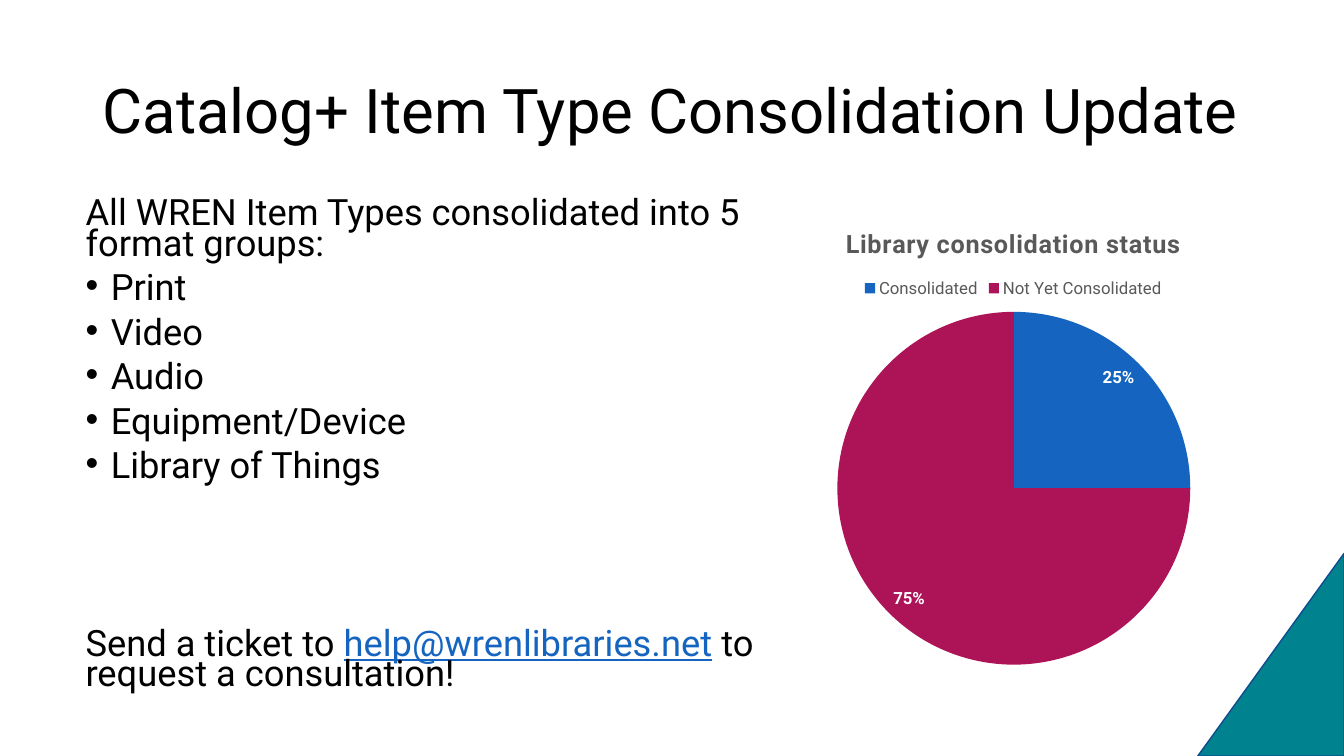
from lxml import etree
from pptx import Presentation
from pptx.chart.data import CategoryChartData
from pptx.dml.color import RGBColor
from pptx.enum.chart import XL_CHART_TYPE, XL_LABEL_POSITION, XL_LEGEND_POSITION
from pptx.enum.shapes import MSO_SHAPE
from pptx.enum.text import MSO_ANCHOR
from pptx.oxml import parse_xml
from pptx.oxml.ns import nsdecls, qn
from pptx.util import Inches, Pt

PIE = XL_CHART_TYPE.PIE
INSIDE_END = XL_LABEL_POSITION.INSIDE_END
LEGEND_TOP = XL_LEGEND_POSITION.TOP
RIGHT_TRIANGLE = MSO_SHAPE.RIGHT_TRIANGLE
MIDDLE, TOP = MSO_ANCHOR.MIDDLE, MSO_ANCHOR.TOP

WIDTH, HEIGHT = 13.33, 7.5
FONT = "Roboto"
COLORS = {
    "text": "000000", "muted": "595959", "white": "FFFFFF", "blue": "1565C0",
    "magenta": "AD1457", "teal": "00838E", "outline": "104B8E",
}
TITLE_BOX = (0.92, 0.4, 11.5, 1.45)
BODY_BOX = (0.75, 1.95, 7.22, 5.15)
CHART_BOX = (7.34, 2.06, 5.42, 4.68)
CORNER_BOX = (11.88, 5.49, 1.45, 2.01)
TITLE = "Catalog+ Item Type Consolidation Update"
INTRO = "All WREN Item Types consolidated into 5 format groups:"
FORMATS = ["Print", "Video", "Audio", "Equipment/Device", "Library of Things"]
CONTACT = [
    ("Send a ticket to ", {}),
    ("help@wrenlibraries.net", {"color": "blue", "underline": True}),
    (" to request a consultation!", {}),
]
STATUS = {"Consolidated": (25, "blue"), "Not Yet Consolidated": (75, "magenta")}
PLOT_SHARES = {"x": 0.178, "y": 0.221, "w": 0.646, "h": 0.748}


def rgb(name):
    """Return the named colour."""
    return RGBColor.from_string(COLORS[name])


def format_font(font, size, color="text", **values):
    """Set the typeface, size, colour and further font values."""
    font.color.rgb = rgb(color)
    for name, value in {"name": FONT, "size": Pt(size), **values}.items():
        setattr(font, name, value)


def add_text_frame(slide, box, anchor):
    """Add a wrapping text box and return its frame."""
    frame = slide.shapes.add_textbox(*map(Inches, box)).text_frame
    frame.word_wrap = True
    frame.vertical_anchor = anchor
    return frame


def add_runs(paragraph, runs, size, spacing):
    """Fill a paragraph with formatted runs."""
    paragraph.line_spacing = spacing
    for text, values in runs:
        run = paragraph.add_run()
        run.text = text
        format_font(run.font, size, **values)


def add_bullet(paragraph):
    """Give a paragraph a round bullet with a hanging indent."""
    properties = paragraph._p.get_or_add_pPr()
    properties.set("marL", str(Inches(0.25)))
    properties.set("indent", str(-Inches(0.25)))
    etree.SubElement(properties, qn("a:buFont")).set("typeface", "Arial")
    etree.SubElement(properties, qn("a:buChar")).set("char", "•")


def add_corner(slide, box):
    """Draw the triangle that fills the lower right corner."""
    left, top, width, height = box
    shift = (height - width) / 2
    triangle = slide.shapes.add_shape(
        RIGHT_TRIANGLE, *map(Inches, (left - shift, top + shift, height, width)))
    triangle.rotation = 270
    triangle.shadow.inherit = False
    triangle.fill.solid()
    triangle.fill.fore_color.rgb = rgb("teal")
    triangle.line.color.rgb = rgb("outline")
    triangle.line.width = Pt(1)


def add_title(slide, box):
    """Write the slide title."""
    frame = add_text_frame(slide, box, MIDDLE)
    add_runs(frame.paragraphs[0], [(TITLE, {})], 44, 0.9)


def add_body(slide, box):
    """Write the introduction, the format groups and the contact line."""
    frame = add_text_frame(slide, box, TOP)
    add_runs(frame.paragraphs[0], [(INTRO, {})], 25.9, 0.7)
    for name in FORMATS:
        paragraph = frame.add_paragraph()
        add_bullet(paragraph)
        add_runs(paragraph, [(name, {})], 25.9, 0.7)
        paragraph.space_before = Pt(10)
    paragraph = frame.add_paragraph()
    add_runs(paragraph, CONTACT, 25.9, 0.7)
    paragraph.space_before = Pt(105)


def place_plot(chart, shares):
    """Place the pie at shares of the chart's size."""
    plot_area = chart._chartSpace.chart.plotArea
    for layout in plot_area.findall(qn("c:layout")):
        plot_area.remove(layout)
    modes = "".join(f'<c:{axis}Mode val="edge"/>' for axis in "xy")
    sizes = "".join(f'<c:{key} val="{share}"/>' for key, share in shares.items())
    plot_area.insert(0, parse_xml(
        f'<c:layout {nsdecls("c")}><c:manualLayout><c:layoutTarget val="inner"/>'
        f'{modes}{sizes}</c:manualLayout></c:layout>'))


def add_status_chart(slide, box):
    """Draw the pie of consolidation status."""
    data = CategoryChartData()
    data.categories = list(STATUS)
    data.add_series("Series 1", [value for value, _ in STATUS.values()])
    chart = slide.shapes.add_chart(PIE, *map(Inches, box), data).chart
    format_font(chart.font, 10)

    chart.has_title = True
    run = chart.chart_title.text_frame.paragraphs[0].add_run()
    run.text = "Library consolidation status"
    format_font(run.font, 18, "muted", bold=True)
    run.font._element.set("spc", "50")

    chart.has_legend = True
    chart.legend.position = LEGEND_TOP
    chart.legend.include_in_layout = False
    format_font(chart.legend.font, 12, "muted")

    plot = chart.plots[0]
    plot.vary_by_categories = True
    for index, (_, color) in enumerate(STATUS.values()):
        wedge = plot.series[0].points[index].format
        wedge.fill.solid()
        wedge.fill.fore_color.rgb = rgb(color)
        wedge.line.fill.background()
    plot.has_data_labels = True
    labels = plot.data_labels
    labels.show_percentage = True
    labels.show_value = False
    labels.number_format = "0%"
    labels.number_format_is_linked = False
    labels.position = INSIDE_END
    format_font(labels.font, 12, "white", bold=True)
    place_plot(chart, PLOT_SHARES)


def main():
    """Build and save the slide."""
    presentation = Presentation()
    presentation.slide_width = Inches(WIDTH)
    presentation.slide_height = Inches(HEIGHT)
    slide = presentation.slides.add_slide(presentation.slide_layouts[6])
    add_corner(slide, CORNER_BOX)
    add_title(slide, TITLE_BOX)
    add_body(slide, BODY_BOX)
    add_status_chart(slide, CHART_BOX)
    presentation.save("out.pptx")


if __name__ == "__main__":
    main()
